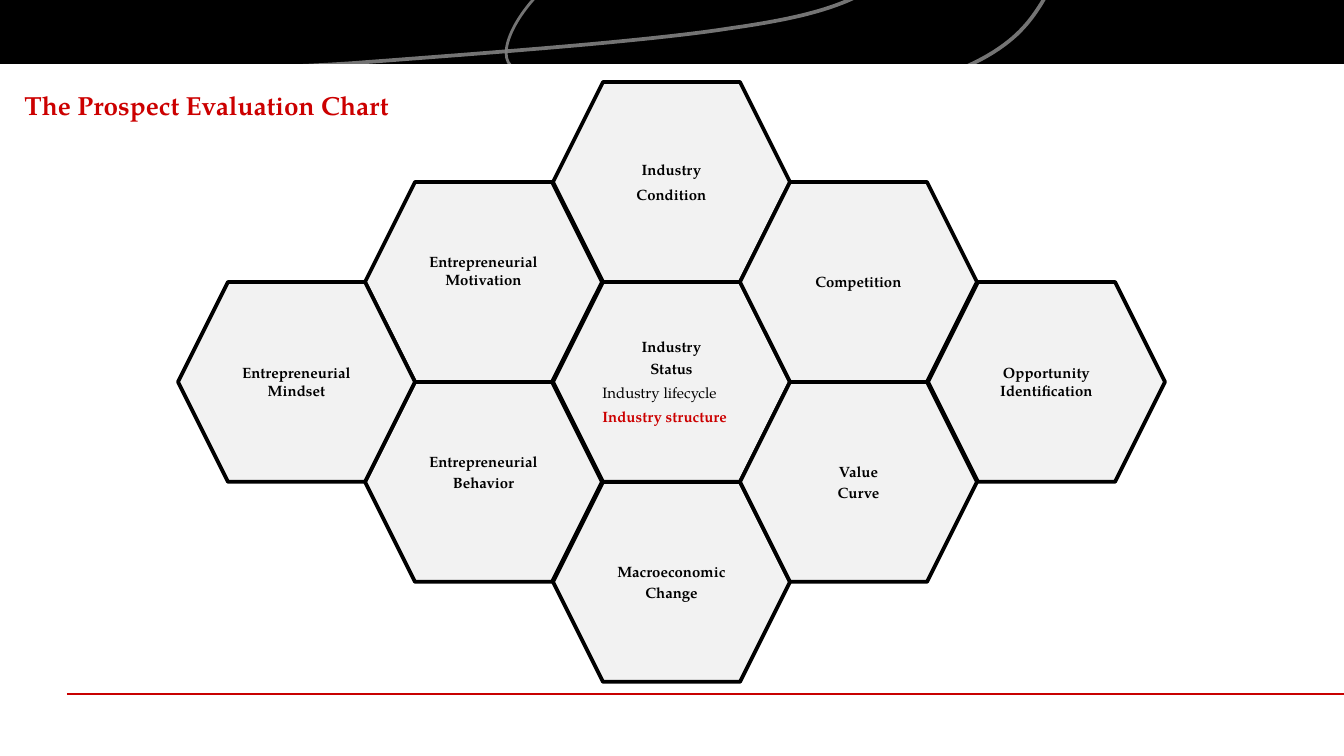
from dataclasses import dataclass

from lxml import etree
from pptx import Presentation
from pptx.dml.color import RGBColor
from pptx.enum.shapes import MSO_CONNECTOR, MSO_SHAPE
from pptx.enum.text import MSO_ANCHOR, MSO_AUTO_SIZE, PP_ALIGN
from pptx.oxml.ns import qn
from pptx.shapes.autoshape import Shape
from pptx.slide import Slide
from pptx.util import Emu, Pt

STRAIGHT = MSO_CONNECTOR.STRAIGHT
ARC, HEXAGON, RECTANGLE = MSO_SHAPE.ARC, MSO_SHAPE.HEXAGON, MSO_SHAPE.RECTANGLE
MIDDLE, TOP = MSO_ANCHOR.MIDDLE, MSO_ANCHOR.TOP
CENTER, LEFT = PP_ALIGN.CENTER, PP_ALIGN.LEFT
NO_AUTO_SIZE = MSO_AUTO_SIZE.NONE

BLACK = RGBColor(0x00, 0x00, 0x00)
WHITE = RGBColor(0xFF, 0xFF, 0xFF)
GRAY = RGBColor(0x80, 0x80, 0x80)
PALE = RGBColor(0xF2, 0xF2, 0xF2)
RED = RGBColor(0xCC, 0x00, 0x00)
RULE_RED = RGBColor(0xC8, 0x00, 0x00)

FONT = "TeX Gyre Pagella"
EMU_PER_PX = 914400 / 134.4
PAGE_WIDTH, PAGE_HEIGHT = 1344, 756
BAND_HEIGHT = 64
GRID_LEFT, GRID_TOP = 178, 82
TWO_COLUMNS, HALF_ROW = 375, 100
CELL_WIDTH, CELL_HEIGHT = 237, 200
INSET = 13
CURVE_STEPS = 20

Point = tuple[int, int]


@dataclass(frozen=True)
class Line:
    text: str
    bold: bool = True
    color: RGBColor = BLACK
    align: PP_ALIGN = CENTER
    spacing: float = 1.0
    after: int = 2


@dataclass(frozen=True)
class Cell:
    column: int
    row: int
    lines: tuple[Line, ...]
    lift: int = 0


CELLS = (
    Cell(2, 4, (Line("Macroeconomic"), Line("Change"))),
    Cell(1, 1, (Line("Entrepreneurial Motivation"),), lift=11),
    Cell(1, 3, (Line("Entrepreneurial Behavior", spacing=1.15),), lift=11),
    Cell(2, 0, (Line("Industry"), Line("Condition", spacing=1.15))),
    Cell(2, 2, (
        Line("Industry"),
        Line("Status"),
        Line("Industry lifecycle", bold=False, align=LEFT, spacing=1.15),
        Line("Industry structure", color=RED, align=LEFT, spacing=1.15, after=0),
    )),
    Cell(4, 2, (Line("Opportunity Identification"),)),
    Cell(3, 3, (Line("Value"), Line("Curve"))),
    Cell(3, 1, (Line("Competition"),)),
    Cell(0, 2, (Line("Entrepreneurial Mindset"),)),
)

CURVES: tuple[tuple[Point, ...], ...] = (
    ((192, 66), (229, 67), (265, 69), (355, 63), (445, 56),
     (646, 42), (732, 28), (818, 16), (845, 3), (872, -11)),
    ((685, 132), (704, 134), (724, 138), (771, 126), (820, 113),
     (929, 86), (974, 63), (1021, 40), (1035, 15), (1050, -11)),
)


def px(length: float) -> Emu:
    return Emu(round(length * EMU_PER_PX))


def add_box(page: Slide, kind: MSO_SHAPE, left: int, top: int,
            width: int, height: int) -> Shape:
    box = page.shapes.add_shape(kind, px(left), px(top), px(width), px(height))
    box.shadow.inherit = False
    return box


def add_band(page: Slide, top: int, height: int, color: RGBColor) -> None:
    band = add_box(page, RECTANGLE, 0, top, PAGE_WIDTH, height)
    band.fill.solid()
    band.fill.fore_color.rgb = color
    band.line.fill.background()


def style_swirl(swirl: Shape, width: float) -> None:
    swirl.fill.background()
    swirl.line.color.rgb = GRAY
    swirl.line.width = Pt(width)
    color = swirl.line._ln.find(".//" + qn("a:srgbClr"))
    etree.SubElement(color, qn("a:alpha")).set("val", "91000")


def sample_curve(points: tuple[Point, ...]) -> list[tuple[int, int]]:
    samples = []
    for first in range(0, len(points) - 1, 3):
        segment = points[first:first + 4]
        for step in range(1, CURVE_STEPS + 1):
            t = step / CURVE_STEPS
            weights = ((1 - t) ** 3, 3 * t * (1 - t) ** 2, 3 * t * t * (1 - t), t ** 3)
            x, y = (sum(w * point[axis] for w, point in zip(weights, segment))
                    for axis in (0, 1))
            samples.append((px(x), px(y)))
    return samples


def add_curve(page: Slide, points: tuple[Point, ...]) -> None:
    start_x, start_y = points[0]
    builder = page.shapes.build_freeform(px(start_x), px(start_y))
    builder.add_line_segments(sample_curve(points), close=False)
    curve = builder.convert_to_shape()
    curve.shadow.inherit = False
    style_swirl(curve, 2)


def add_footer_rule(page: Slide) -> None:
    rule = page.shapes.add_connector(STRAIGHT, px(67), px(694), px(PAGE_WIDTH), px(694))
    rule.line.color.rgb = RULE_RED
    rule.line.width = Pt(1.5)
    etree.SubElement(rule._element.spPr, qn("a:effectLst"))


def add_cell(page: Slide, cell: Cell) -> None:
    box = add_box(page, HEXAGON, GRID_LEFT + cell.column * TWO_COLUMNS // 2,
                  GRID_TOP + cell.row * HALF_ROW, CELL_WIDTH, CELL_HEIGHT)
    box.fill.solid()
    box.fill.fore_color.rgb = PALE
    box.line.color.rgb = BLACK
    box.line.width = Pt(2)
    frame = box.text_frame
    frame.word_wrap = True
    frame.vertical_anchor = MIDDLE
    frame.margin_left = frame.margin_right = frame.margin_top = px(INSET)
    frame.margin_bottom = px(INSET + 2 * cell.lift)
    for index, line in enumerate(cell.lines):
        para = frame.add_paragraph() if index else frame.paragraphs[0]
        para.text = line.text
        para.alignment = line.align
        para.line_spacing = line.spacing
        para.space_after = Pt(line.after)
        para.font.name = FONT
        para.font.size = Pt(8)
        para.font.bold = line.bold
        para.font.color.rgb = line.color


def format_title(page: Slide) -> None:
    title = page.shapes.title
    title.left, title.top, title.width, title.height = px(11), px(83), px(1321), px(46)
    page.shapes._spTree.append(title._element)
    frame = title.text_frame
    frame.word_wrap = True
    frame.auto_size = NO_AUTO_SIZE
    frame.vertical_anchor = TOP
    para = frame.paragraphs[0]
    para.text = "The Prospect Evaluation Chart"
    para.alignment = LEFT
    para.font.name = FONT
    para.font.size = Pt(14)
    para.font.bold = True
    para.font.color.rgb = RED


def main() -> None:
    deck = Presentation()
    deck.slide_width, deck.slide_height = px(PAGE_WIDTH), px(PAGE_HEIGHT)
    page = deck.slides.add_slide(deck.slide_layouts[5])
    add_footer_rule(page)
    add_band(page, 0, BAND_HEIGHT, BLACK)
    for points in CURVES:
        add_curve(page, points)
    arc = add_box(page, ARC, 530, -56, 59, 141)
    arc.rotation = 224
    style_swirl(arc, 1.5)
    add_band(page, BAND_HEIGHT, 81, WHITE)
    format_title(page)
    for cell in CELLS:
        add_cell(page, cell)
    deck.save("out.pptx")


if __name__ == "__main__":
    main()
